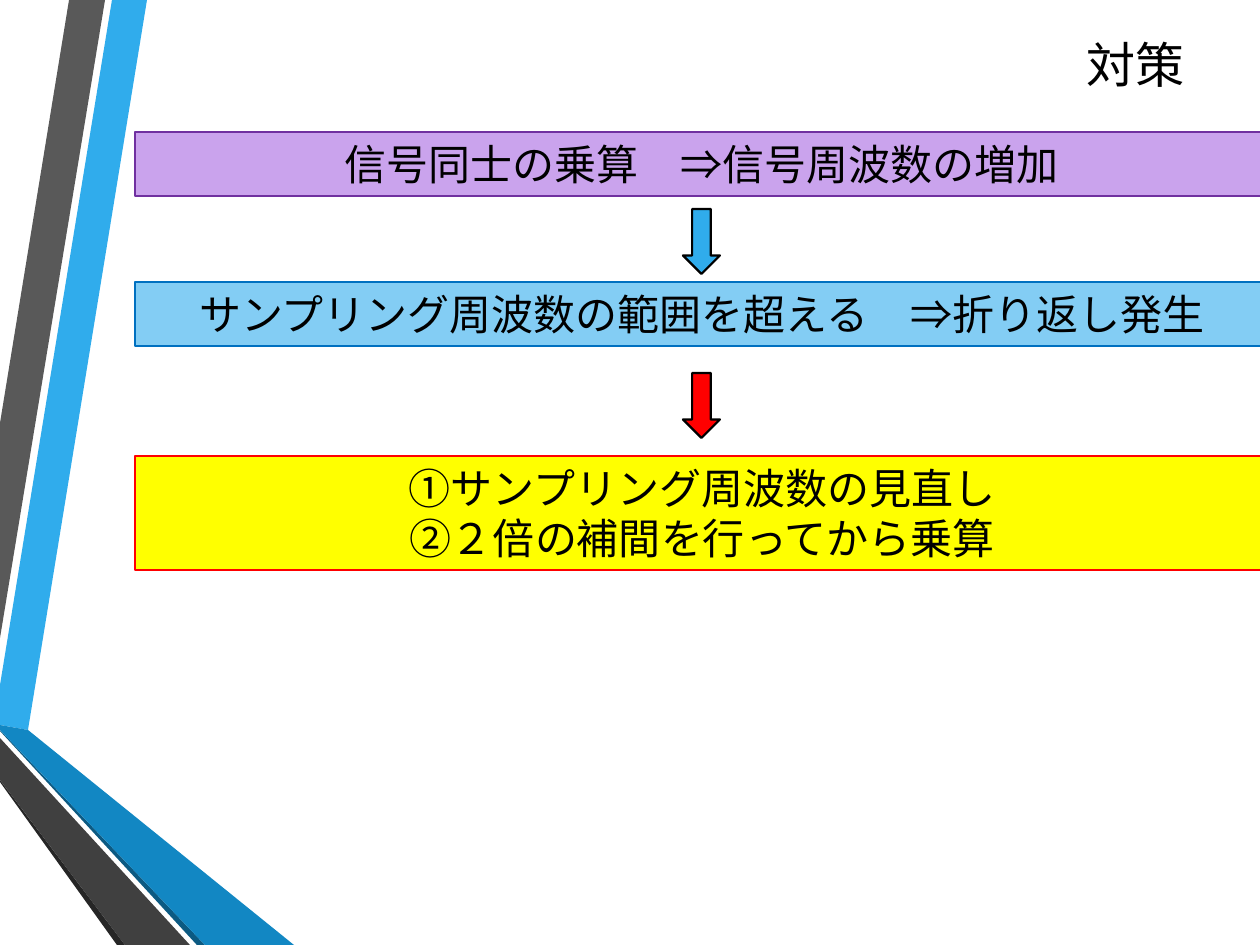
from pptx import Presentation
from pptx.dml.color import RGBColor
from pptx.enum.shapes import MSO_SHAPE as Kind
from pptx.enum.text import MSO_ANCHOR as Anchor, PP_ALIGN as Align
from pptx.util import Emu, Pt

PX = 914400 // 126  # EMU in one px


class Theme:
    sky, blue, navy = "30ACEC", "1287C3", "0C5A82"
    gray, dark, coal = "595959", "404040", "262626"
    red, ink = "FF0000", "000000"
    head_font, body_font = "Cabin", "Times New Roman"
    head_size, body_size = 28, 24
    thin, bold = 0.75, 1.25


# Content: ribbons as (fill, corner points)
RIBBONS = [
    (Theme.sky, [(0, 685), (0, 725), (28, 730), (147, 0), (112, 0)]),
    (Theme.gray, [(105, 0), (69, 0), (0, 423), (0, 638)]),
    (Theme.coal, [(0, 780), (0, 782), (117, 945), (125, 945)]),
    (Theme.navy, [(0, 730), (0, 731), (197, 945), (205, 945)]),
    (Theme.blue, [(0, 730), (205, 945), (294, 945), (28, 730), (0, 725)]),
    (Theme.dark, [(0, 780), (125, 945), (190, 945), (0, 738)]),
]
TITLE = "対策"
# Steps as (top, height, fill, line, lines of text)
STEPS = [
    (132, 64, "CAA3ED", "7030A0", ["信号同士の乗算　⇒信号周波数の増加"]),
    (282, 64, "83CDF4", "0070C0", ["サンプリング周波数の範囲を超える　⇒折り返し発生"]),
    (456, 114, "FFFF00", Theme.red,
     ["①サンプリング周波数の見直し", "②２倍の補間を行ってから乗算"]),
]
# Arrows as (top, fill)
ARROWS = [(209, Theme.sky), (373, Theme.red)]

LEFT, WIDE = 135, 1134
ARROW_W, ARROW_H = 37, 65


def scale(*nums):
    return [Emu(n * PX) for n in nums]


def paint(shape, fill, line=None, width=0):
    shape.shadow.inherit = False
    shape.fill.solid()
    shape.fill.fore_color.rgb = RGBColor.from_string(fill)
    if line:
        shape.line.color.rgb = RGBColor.from_string(line)
        shape.line.width = Pt(width)
    else:
        shape.line.fill.background()


def write(shape, lines, align, font, size):
    frame = shape.text_frame
    frame.word_wrap = True
    frame.vertical_anchor = Anchor.MIDDLE
    frame.text = "\n".join(lines)
    for para in frame.paragraphs:
        para.alignment = align
        para.font.name = font
        para.font.size = Pt(size)
        para.font.color.rgb = RGBColor.from_string(Theme.ink)


deck = Presentation()
deck.slide_width, deck.slide_height = scale(1260, 945)
shapes = deck.slides.add_slide(deck.slide_layouts[6]).shapes

# Ribbons on the left
for fill, points in RIBBONS:
    first, *rest = [scale(*point) for point in points]
    outline = shapes.build_freeform(*first)
    outline.add_line_segments(rest, close=True)
    paint(outline.convert_to_shape(), fill)

# Title
title = shapes.add_textbox(*scale(LEFT, 4, 1062, 120))
write(title, [TITLE], Align.RIGHT, Theme.head_font, Theme.head_size)

# Steps
for top, high, fill, line, lines in STEPS:
    box = shapes.add_shape(Kind.RECTANGLE, *scale(LEFT, top, WIDE, high))
    paint(box, fill, line, Theme.thin)
    write(box, lines, Align.CENTER, Theme.body_font, Theme.body_size)

# Arrows, centred under the steps
mid = LEFT + (WIDE - ARROW_W) // 2
for top, fill in ARROWS:
    arrow = shapes.add_shape(Kind.DOWN_ARROW, *scale(mid, top, ARROW_W, ARROW_H))
    paint(arrow, fill, Theme.ink, Theme.bold)

deck.save("out.pptx")
